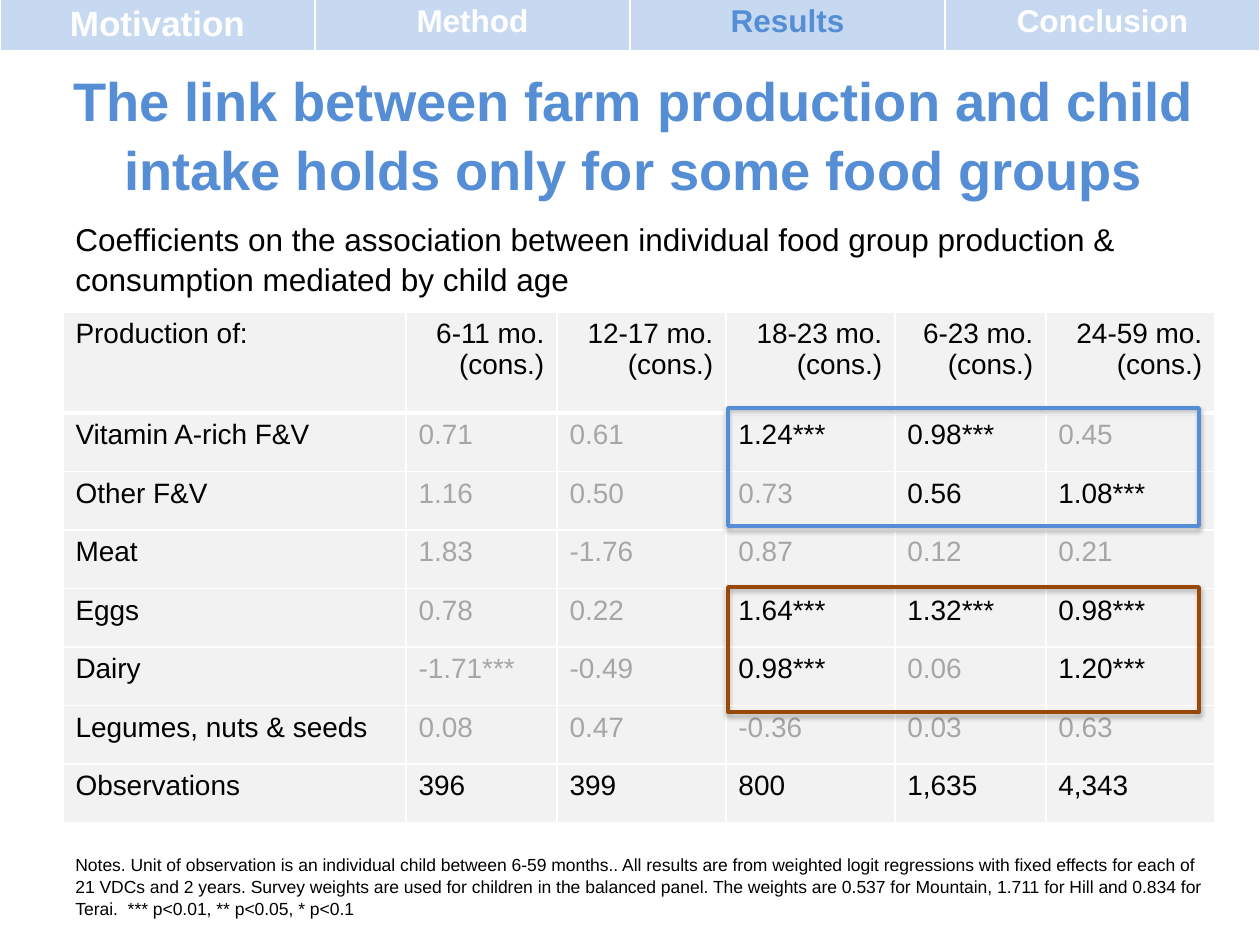
from lxml import etree
from pptx import Presentation
from pptx import util as u
from pptx.dml.color import RGBColor
from pptx.enum import shapes, text
from pptx.oxml import parse_xml
from pptx.oxml.ns import nsdecls, qn

SCALE = 914400 / 126  # EMU in one px
HUES = {"blue": "558ED5", "pale": "C6D9F1", "brown": "984807", "panel": "F2F2F2",
        "faint": "A6A6A6", "ink": "000000", "white": "FFFFFF"}
LEFT, RIGHT = text.PP_ALIGN.LEFT, text.PP_ALIGN.RIGHT
MID = text.PP_ALIGN.CENTER

TABS = ["Motivation", "Method", "Results", "Conclusion"]
HEAD = ["Production of:"] + [f"{age} mo.\n(cons.)" for age in
                             ("6-11", "12-17", "18-23", "6-23", "24-59")]
BODY = [
    ["Vitamin A-rich F&V", "0.71", "0.61", "1.24***", "0.98***", "0.45"],
    ["Other F&V", "1.16", "0.50", "0.73", "0.56", "1.08***"],
    ["Meat", "1.83", "-1.76", "0.87", "0.12", "0.21"],
    ["Eggs", "0.78", "0.22", "1.64***", "1.32***", "0.98***"],
    ["Dairy", "-1.71***", "-0.49", "0.98***", "0.06", "1.20***"],
    ["Legumes, nuts & seeds", "0.08", "0.47", "-0.36", "0.03", "0.63"],
    ["Observations", "396", "399", "800", "1,635", "4,343"],
]
STRONG = {"1.24***", "0.98***", "0.56", "1.08***", "1.64***", "1.32***", "1.20***"}
TITLE = ("The link between farm production and child intake "
         "holds only for some food groups")
LEAD = ("Coefficients on the association between individual food group "
        "production & consumption mediated by child age")
NOTES = ("Notes. Unit of observation is an individual child between 6-59 months.. "
         "All results are from weighted logit regressions with fixed effects for "
         "each of 21 VDCs and 2 years. Survey weights are used for children in the "
         "balanced panel. The weights are 0.537 for Mountain, 1.711 for Hill and "
         "0.834 for Terai.  *** p<0.01, ** p<0.05, * p<0.1")


def px(n):
    return u.Emu(round(n * SCALE))


def rgb(hue):
    return RGBColor.from_string(HUES[hue])


def write(frame, words, size=16, hue="ink", bold=False, align=LEFT, gap=None):
    frame.word_wrap = True
    frame.text = words
    for para in frame.paragraphs:
        para.alignment = align
        para.line_spacing = gap
        for run in para.runs:
            font = run.font
            font.name, font.size, font.bold = "Arial", u.Pt(size), bold
            font.color.rgb = rgb(hue)


def edge(cell, top=1, bottom=1):
    """Draw white cell borders, with widths in points."""
    props = cell._tc.get_or_add_tcPr()
    sides = {"lnL": 1, "lnR": 1, "lnT": top, "lnB": bottom}
    for i, (side, wide) in enumerate(sides.items()):
        props.insert(i, parse_xml(
            f'<a:{side} {nsdecls("a")} w="{u.Pt(wide)}"><a:solidFill>'
            f'<a:srgbClr val="{HUES["white"]}"/></a:solidFill></a:{side}>'))


def grid(slide, box, cols, rows, fill):
    """Add a plain table whose cells share one fill."""
    table = slide.shapes.add_table(len(rows), len(cols), *map(px, box)).table
    table.horz_banding = False
    for col, wide in zip(table.columns, cols):
        col.width = px(wide)
    for row, high in zip(table.rows, rows):
        row.height = px(high)
    for cell in table.iter_cells():
        cell.fill.solid()
        cell.fill.fore_color.rgb = rgb(fill)
    return table


def nav(slide, x, y, w, h):
    table = grid(slide, (x, y, w, h), [w / len(TABS)] * len(TABS), [h], "pale")
    for i, name in enumerate(TABS):
        cell = table.cell(0, i)
        write(cell.text_frame, name, size=18 if i else 20, bold=True, align=MID,
              hue="blue" if name == "Results" else "white")
        edge(cell, bottom=3)


def title(slide, x, y, w, h):
    shape = slide.shapes.title
    shape.left, shape.top, shape.width, shape.height = map(px, (x, y, w, h))
    frame = shape.text_frame
    frame.auto_size = text.MSO_AUTO_SIZE.NONE
    frame.vertical_anchor = text.MSO_ANCHOR.MIDDLE
    write(frame, TITLE, size=31, hue="blue", bold=True, align=MID, gap=1.06)


def note(slide, words, size, x, y, w, h):
    box = slide.shapes.add_textbox(*map(px, (x, y, w, h)))
    write(box.text_frame, words, size=size, gap=1.05)


def results(slide, x, y, w, h):
    cols, top = [343, 151, 169, 169, 151, 169], 101
    rows = [top] + [(h - top) / len(BODY)] * len(BODY)
    table = grid(slide, (x, y, w, h), cols, rows, "panel")
    for r, line in enumerate([HEAD] + BODY):
        for c, words in enumerate(line):
            cell = table.cell(r, c)
            dark = r in (0, len(BODY)) or c == 0 or words in STRONG
            write(cell.text_frame, words, hue="ink" if dark else "faint",
                  align=RIGHT if r == 0 and c else LEFT)
            edge(cell, top=3 if r == 1 else 1, bottom=1 if r else 3)


def frame(slide, hue, x, y, w, h):
    """Outline a group of cells, with a soft shadow below."""
    box = slide.shapes.add_shape(shapes.MSO_SHAPE.RECTANGLE, *map(px, (x, y, w, h)))
    box.fill.background()
    box.line.color.rgb = rgb(hue)
    box.line.width = u.Pt(2)
    box.shadow.inherit = False
    effect = box._element.spPr.find(qn("a:effectLst"))
    cast = etree.SubElement(effect, qn("a:outerShdw"), blurRad=str(u.Pt(3.1)),
                            dist=str(u.Pt(1.8)), dir="5400000", rotWithShape="0")
    tone = etree.SubElement(cast, qn("a:srgbClr"), val=HUES["ink"])
    etree.SubElement(tone, qn("a:alpha"), val="35000")


def main():
    deck = Presentation()
    deck.slide_width, deck.slide_height = px(1260), px(945)
    slide = deck.slides.add_slide(deck.slide_layouts[5])
    title(slide, 34, 53, 1198, 159)
    # Table with its lead and notes
    results(slide, 63, 312, 1152, 511)
    note(slide, NOTES, 10, 63, 847, 1153, 77)
    note(slide, LEAD, 18, 63, 212, 1218, 89)
    # Highlights
    frame(slide, "blue", 728, 408, 471, 118)
    frame(slide, "brown", 728, 587, 471, 125)
    # Section bar
    nav(slide, 0, -2, 1260, 52)
    deck.save("out.pptx")


if __name__ == "__main__":
    main()
